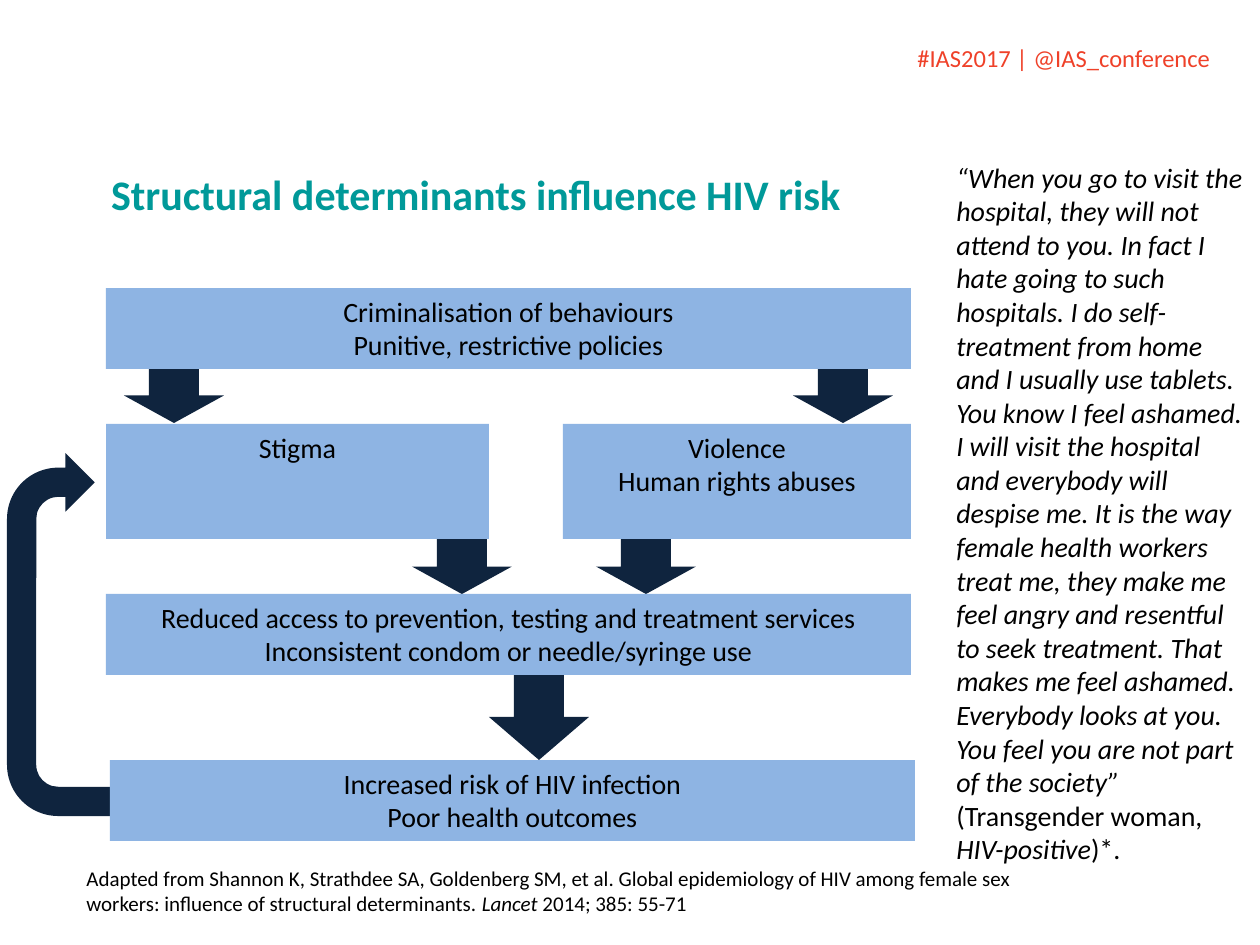
from dataclasses import dataclass

from pptx import Presentation
from pptx import util as u
from pptx.dml.color import RGBColor
from pptx.enum import shapes, text

SCALE = 914400 / 126
FONT = "Calibri"
BLACK, NAVY, BLUE, TEAL, RED = "000000", "0F243E", "8EB4E3", "009999", "EF4129"
LEFT, WIDE = 106, 805
KIND = shapes.MSO_SHAPE
Line = list[tuple[str, bool]]


@dataclass
class Box:
    x: int
    y: int
    w: int
    h: int


@dataclass
class Step:
    box: Box
    lines: list[str]


STEPS = [
    Step(Box(LEFT, 288, WIDE, 81), ["Criminalisation of behaviours", "Punitive, restrictive policies"]),
    Step(Box(LEFT, 424, 383, 115), ["Stigma"]),
    Step(Box(563, 424, 348, 115), ["Violence", "Human rights abuses"]),
    Step(Box(LEFT, 594, WIDE, 81), ["Reduced access to prevention, testing and treatment services",
                                    "Inconsistent condom or needle/syringe use"]),
    Step(Box(110, 760, WIDE, 81), ["Increased risk of HIV infection", "Poor health outcomes"]),
]
ARROWS = [Box(x, y, 100, h) for x, y, h in
          [(124, 368, 55), (793, 368, 55), (412, 539, 55), (596, 539, 55), (489, 674, 86)]]
LOOP = Box(-116, 576, 363, 117)

QUOTE: list[Line] = [
    [("“When you go to visit the hospital, they will not attend to you. In fact I hate going "
      "to such hospitals. I do self-treatment from home and I usually use tablets. You know I "
      "feel ashamed. I will visit the hospital and everybody will despise me. It is the way "
      "female health workers treat me, they make me feel angry and resentful to seek treatment. "
      "That makes me feel ashamed. Everybody looks at you. You feel you are not part of the "
      "society”", True)],
    [("(Transgender woman, ", False), ("HIV-positive", True), (")*.", False)],
]
SOURCE: list[Line] = [
    [("Adapted from Shannon K, Strathdee SA, Goldenberg SM, et al. Global epidemiology of HIV "
      "among female sex workers: influence of structural determinants. ", False),
     ("Lancet ", True), ("2014; 385: 55-71", False)],
]


def px(n: int) -> u.Emu:
    return u.Emu(round(n * SCALE))


def spot(box: Box) -> tuple:
    return px(box.x), px(box.y), px(box.w), px(box.h)


def rgb(code: str) -> RGBColor:
    return RGBColor.from_string(code)


def style(para, size: int, color: str = BLACK, align=text.PP_ALIGN.LEFT) -> None:
    para.alignment = align
    para.font.name = FONT
    para.font.size = u.Pt(size)
    para.font.color.rgb = rgb(color)


def fill(frame, lines: list[Line], size: int, color: str = BLACK,
         align=text.PP_ALIGN.LEFT) -> None:
    """Write lines of (words, italic) runs into a top-anchored frame."""
    frame.word_wrap = True
    frame.vertical_anchor = text.MSO_ANCHOR.TOP
    for i, line in enumerate(lines):
        para = frame.paragraphs[0] if i == 0 else frame.add_paragraph()
        style(para, size, color, align)
        for words, slant in line:
            run = para.add_run()
            run.text = words
            if slant:
                run.font.italic = True


def note(slide, box: Box, lines: list[Line], size: int, color: str = BLACK) -> None:
    fill(slide.shapes.add_textbox(*spot(box)).text_frame, lines, size, color)


def block(slide, kind, box: Box, color: str):
    shape = slide.shapes.add_shape(kind, *spot(box))
    shape.shadow.inherit = False
    shape.fill.solid()
    shape.fill.fore_color.rgb = rgb(color)
    shape.line.fill.background()
    return shape


def head(slide, box: Box, words: str) -> None:
    title = slide.shapes.title
    title.left, title.top, title.width, title.height = spot(box)
    frame = title.text_frame
    frame.text = words
    frame.word_wrap = True
    frame.auto_size = text.MSO_AUTO_SIZE.NONE
    frame.vertical_anchor = text.MSO_ANCHOR.MIDDLE
    style(frame.paragraphs[0], 24, TEAL, text.PP_ALIGN.CENTER)
    frame.paragraphs[0].font.bold = True


def main() -> None:
    deck = Presentation()
    deck.slide_width, deck.slide_height = px(1260), px(945)
    slide = deck.slides.add_slide(deck.slide_layouts[5])

    head(slide, Box(30, 115, 892, 157), "Structural determinants influence HIV risk")
    note(slide, Box(905, 37, 355, 43), [[("#IAS2017 | @IAS_conference", False)]], 14, RED)

    for box in ARROWS:
        block(slide, KIND.DOWN_ARROW, box, NAVY)
    block(slide, KIND.U_TURN_ARROW, LOOP, NAVY).rotation = 270
    for step in STEPS:
        shape = block(slide, KIND.RECTANGLE, step.box, BLUE)
        fill(shape.text_frame, [[(line, False)] for line in step.lines], 16,
             align=text.PP_ALIGN.CENTER)

    note(slide, Box(74, 859, 1002, 86), SOURCE, 12)
    note(slide, Box(944, 154, 316, 726), QUOTE, 16)
    deck.save("out.pptx")


if __name__ == "__main__":
    main()
